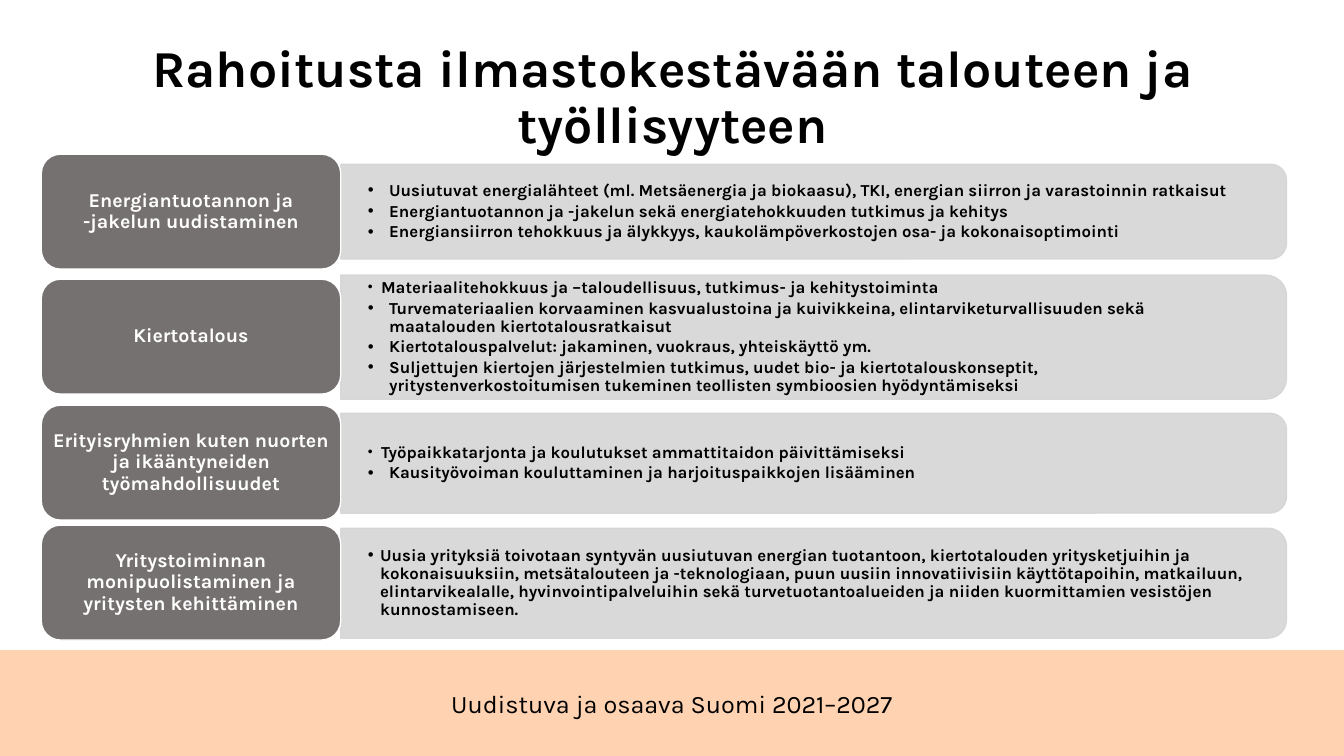
import pptx
import pptx.util
import pptx.dml.color
import pptx.enum.shapes
import pptx.enum.text
import pptx.oxml
import pptx.oxml.ns

Inches = pptx.util.Inches
Pt = pptx.util.Pt
SHAPES = pptx.enum.shapes.MSO_SHAPE
ALIGN = pptx.enum.text.PP_ALIGN
ANCHOR = pptx.enum.text.MSO_ANCHOR

TITLE = "Rahoitusta ilmastokestävään talouteen ja työllisyyteen"
FOOTER = "Uudistuva ja osaava Suomi 2021–2027"
WIDE, NARROW, SMALL = (0.21, 100), (0.12, 100), (0.13, 83)
ROWS = [
    {"label": "Energiantuotannon ja -jakelun uudistaminen",
     "label_top": 1.53, "panel_top": 1.63, "panel_height": 0.94,
     "points": [
         (WIDE, "Uusiutuvat energialähteet (ml. Metsäenergia ja biokaasu), TKI, energian siirron ja varastoinnin ratkaisut"),
         (WIDE, "Energiantuotannon ja -jakelun sekä energiatehokkuuden tutkimus ja kehitys"),
         (WIDE, "Energiansiirron tehokkuus ja älykkyys, kaukolämpöverkostojen osa- ja kokonaisoptimointi")]},
    {"label": "Kiertotalous",
     "label_top": 2.77, "panel_top": 2.73, "panel_height": 1.23,
     "points": [
         (SMALL, "Materiaalitehokkuus ja –taloudellisuus, tutkimus- ja kehitystoiminta"),
         (WIDE, "Turvemateriaalien korvaaminen kasvualustoina ja kuivikkeina, elintarviketurvallisuuden sekä maatalouden kiertotalousratkaisut"),
         (WIDE, "Kiertotalouspalvelut: jakaminen, vuokraus, yhteiskäyttö ym."),
         (WIDE, "Suljettujen kiertojen järjestelmien tutkimus, uudet bio- ja kiertotalouskonseptit, yritystenverkostoitumisen tukeminen teollisten symbioosien hyödyntämiseksi")]},
    {"label": "Erityisryhmien kuten nuorten ja ikääntyneiden työmahdollisuudet",
     "label_top": 4.02, "panel_top": 4.1, "panel_height": 0.99,
     "points": [
         (SMALL, "Työpaikkatarjonta ja koulutukset ammattitaidon päivittämiseksi"),
         (WIDE, "Kausityövoiman kouluttaminen ja harjoituspaikkojen lisääminen")]},
    {"label": "Yritystoiminnan monipuolistaminen ja yritysten kehittäminen",
     "label_top": 5.21, "panel_top": 5.24, "panel_height": 1.09,
     "points": [
         (NARROW, "Uusia yrityksiä toivotaan syntyvän uusiutuvan energian tuotantoon, kiertotalouden yritysketjuihin ja kokonaisuuksiin, metsätalouteen ja -teknologiaan, puun uusiin innovatiivisiin käyttötapoihin, matkailuun, elintarvikealalle, hyvinvointipalveluihin sekä turvetuotantoalueiden ja niiden kuormittamien vesistöjen kunnostamiseen.")]},
]
LABEL_LEFT, LABEL_WIDTH, LABEL_HEIGHT = 0.41, 2.97, 1.14
PANEL_LEFT, PANEL_WIDTH = 3.38, 9.38


def color(value):
    return pptx.dml.color.RGBColor.from_string(value)


def add_block(slide, kind, box, fill, line=None):
    shape = slide.shapes.add_shape(kind, *map(Inches, box))
    shape.shadow.inherit = False
    shape.fill.solid()
    shape.fill.fore_color.rgb = color(fill)
    if line:
        shape.line.color.rgb = color(line)
        shape.line.width = Pt(1)
    else:
        shape.line.fill.background()
    return shape


def add_text(slide, box):
    return slide.shapes.add_textbox(*map(Inches, box))


def set_frame(shape, anchor, side=0, edge=0):
    frame = shape.text_frame
    frame.word_wrap = True
    frame.vertical_anchor = anchor
    frame.margin_left = frame.margin_right = Inches(side)
    frame.margin_top = frame.margin_bottom = Inches(edge)
    return frame


def style(paragraph, text, size, ink="000000", bold=True, align=ALIGN.CENTER, spacing=0.9):
    paragraph.text = text
    paragraph.alignment = align
    paragraph.line_spacing = spacing
    paragraph.font.name = "Karla"
    paragraph.font.size = Pt(size)
    paragraph.font.bold = bold
    paragraph.font.color.rgb = color(ink)


def add_bullet(paragraph, indent, percent):
    properties = paragraph._p.get_or_add_pPr()
    properties.set("marL", str(Inches(indent)))
    properties.set("indent", str(-Inches(indent)))
    for tag, name, value in (("a:buSzPct", "val", str(percent * 1000)),
                             ("a:buFont", "typeface", "Arial"),
                             ("a:buChar", "char", "•")):
        element = properties.makeelement(pptx.oxml.ns.qn(tag), {name: value})
        properties.append(element)


def set_opacity(color_parent, percent):
    for element in color_parent.iter(pptx.oxml.ns.qn("a:srgbClr")):
        alpha = element.makeelement(pptx.oxml.ns.qn("a:alpha"), {"val": str(percent * 1000)})
        element.append(alpha)


def add_panel(slide, row):
    top, height = row["panel_top"], row["panel_height"]
    turn = (PANEL_WIDTH - height) / 2
    panel = add_block(slide, SHAPES.ROUND_2_SAME_RECTANGLE,
                      (PANEL_LEFT + turn, top - turn, height, PANEL_WIDTH), "D6D5D5", "D6D5D5")
    panel.rotation = 90
    set_opacity(panel._element.spPr, 90)
    box = add_text(slide, (PANEL_LEFT, top, PANEL_WIDTH - 0.05, height))
    frame = set_frame(box, ANCHOR.MIDDLE, 0.27, 0.14)
    for index, ((indent, percent), text) in enumerate(row["points"]):
        paragraph = frame.add_paragraph() if index else frame.paragraphs[0]
        paragraph.line_spacing = 0.9
        paragraph.space_after = Pt(1.8)
        add_bullet(paragraph, indent, percent)
        style(paragraph, text, 12, align=ALIGN.LEFT)


def add_label(slide, row):
    label = add_block(slide, SHAPES.ROUNDED_RECTANGLE,
                      (LABEL_LEFT, row["label_top"], LABEL_WIDTH, LABEL_HEIGHT), "767171", "FFFFFF")
    frame = set_frame(label, ANCHOR.MIDDLE, 0.05, 0.03)
    style(frame.paragraphs[0], row["label"], 14, "FFFFFF")


def main():
    presentation = pptx.Presentation()
    presentation.slide_width = Inches(13.33)
    presentation.slide_height = Inches(7.5)
    slide = presentation.slides.add_slide(presentation.slide_layouts[6])

    add_block(slide, SHAPES.RECTANGLE, (0, 6.45, 13.33, 1.05), "FFD3B1")
    footer = set_frame(add_text(slide, (3.25, 6.83, 6.83, 0.3)), ANCHOR.MIDDLE)
    style(footer.paragraphs[0], FOOTER, 18, bold=False, spacing=1.0)
    title = set_frame(add_text(slide, (0.92, 0.4, 11.5, 1.13)), ANCHOR.BOTTOM)
    style(title.paragraphs[0], TITLE, 37)

    for row in ROWS:
        add_panel(slide, row)
        add_label(slide, row)
    presentation.save("out.pptx")


if __name__ == "__main__":
    main()
